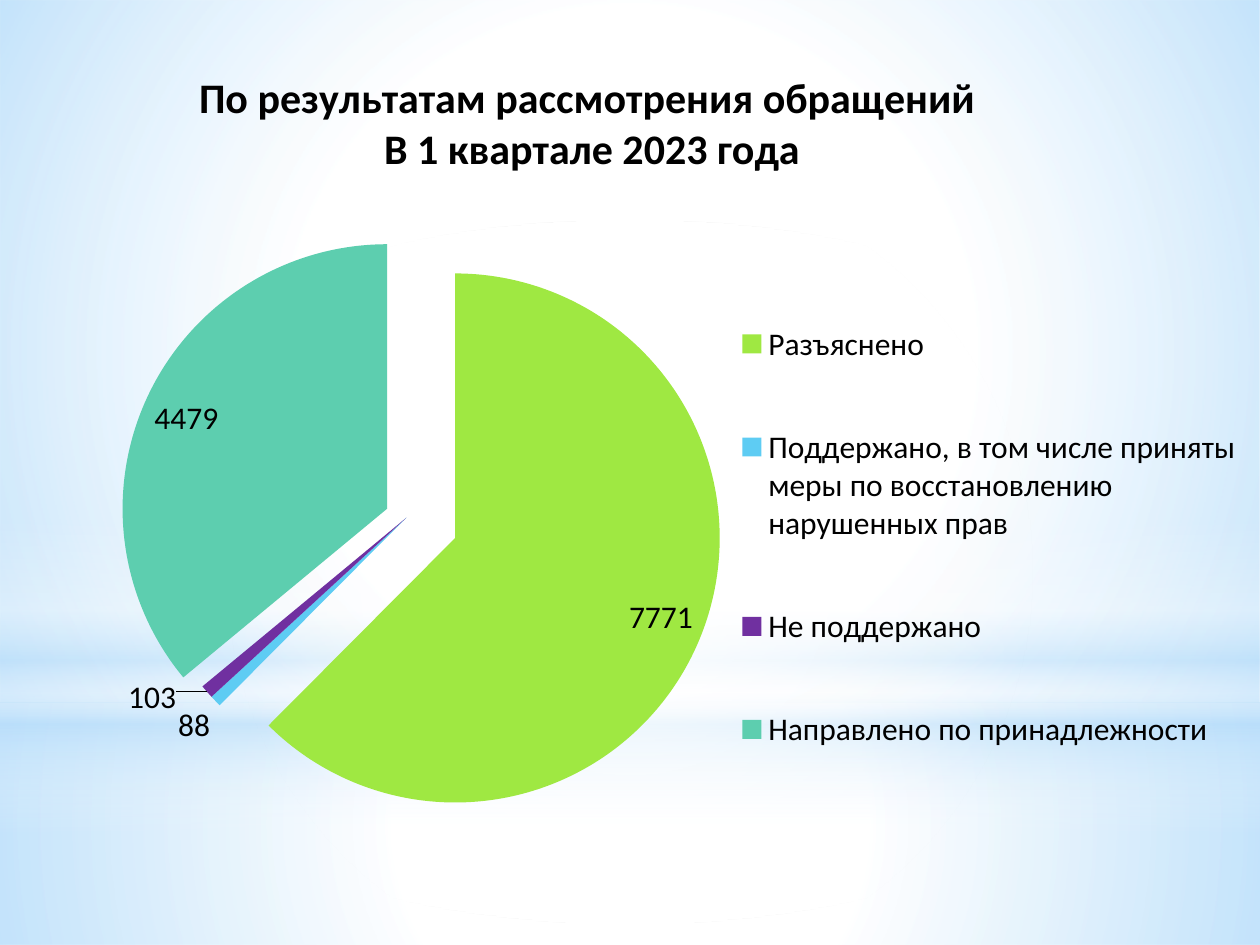
from dataclasses import dataclass
from typing import Optional

import lxml.etree
import pptx
import pptx.chart.data
import pptx.dml.color
import pptx.enum.chart
import pptx.enum.shapes
import pptx.oxml
import pptx.oxml.ns
import pptx.util

Cm = pptx.util.Cm
Pt = pptx.util.Pt
RGBColor = pptx.dml.color.RGBColor
qn = pptx.oxml.ns.qn
LabelPosition = pptx.enum.chart.XL_LABEL_POSITION
ShapeType = pptx.enum.shapes.MSO_SHAPE

WHITE = RGBColor(0xFF, 0xFF, 0xFF)
BLACK = RGBColor(0x00, 0x00, 0x00)
SKY = RGBColor(0xB4, 0xDC, 0xFA)
LIME = RGBColor(0x9F, 0xE8, 0x42)
BLUE = RGBColor(0x5E, 0xCC, 0xF3)
PURPLE = RGBColor(0x70, 0x30, 0xA0)
TEAL = RGBColor(0x5D, 0xCE, 0xAF)

FONT = "Calibri"
WIDTH, HEIGHT = 25.4, 19.05
HORIZON = 14.17


@dataclass
class Glow:
    shape: ShapeType
    top: float
    height: float
    stops: list  # (position %, colour, opacity %)
    angle: Optional[int] = None  # None gives a radial gradient


@dataclass
class Outcome:
    name: str
    count: int
    color: RGBColor
    explosion: int
    label: LabelPosition
    label_shift: Optional[tuple] = None  # fractions of the chart


GLOWS = [
    Glow(ShapeType.RECTANGLE, HORIZON, HEIGHT - HORIZON,
         [(0, WHITE, 91), (37, WHITE, 76), (100, SKY, 79)]),
    Glow(ShapeType.RECTANGLE, 0, HORIZON,
         [(0, WHITE, 89), (48, WHITE, 62), (100, SKY, 79)]),
    Glow(ShapeType.RECTANGLE, 10.46, 6.35,
         [(0, WHITE, 0), (29, WHITE, 30), (45, SKY, 40),
          (55, WHITE, 26), (65, SKY, 60), (100, WHITE, 0)], 90),
    Glow(ShapeType.OVAL, 4.45, HORIZON, [(0, WHITE, 100), (56, WHITE, 0)]),
]

OUTCOMES = [
    Outcome("Разъяснено", 7771, LIME, 20, LabelPosition.INSIDE_END),
    Outcome("Поддержано, в том числе приняты меры по восстановлению нарушенных прав",
            88, BLUE, 0, LabelPosition.OUTSIDE_END),
    Outcome("Не поддержано", 103, PURPLE, 0, LabelPosition.OUTSIDE_END, (-0.02, -0.02)),
    Outcome("Направлено по принадлежности", 4479, TEAL, 8, LabelPosition.INSIDE_END),
]
MAX_EXPLOSION = 25
HEADING = ["По результатам рассмотрения обращений ", "В 1 квартале 2023 года"]


def add_child(parent, tag: str, **attributes):
    child = lxml.etree.SubElement(parent, qn(tag))
    for name, value in attributes.items():
        child.set(name, str(value))
    return child


def draw_glow(slide, glow: Glow) -> None:
    area = slide.shapes.add_shape(glow.shape, 0, Cm(glow.top), Cm(WIDTH), Cm(glow.height))
    area.shadow.inherit = False
    area.line.fill.background()
    area.fill.gradient()
    gradient = area.fill._xPr.find(qn("a:gradFill"))
    for child in list(gradient):
        gradient.remove(child)
    stop_list = add_child(gradient, "a:gsLst")
    for position, color, opacity in glow.stops:
        stop = add_child(stop_list, "a:gs", pos=position * 1000)
        tint = add_child(stop, "a:srgbClr", val=color)
        add_child(tint, "a:alpha", val=opacity * 1000)
    if glow.angle is None:
        radial = add_child(gradient, "a:path", path="circle")
        add_child(radial, "a:fillToRect", l=50000, t=50000, r=50000, b=50000)
    else:
        add_child(gradient, "a:lin", ang=glow.angle * 60000, scaled=0)


def place(part, after: Optional[str], **settings) -> None:
    """Give a chart part a manual layout, in fractions of the chart."""
    for old in part.findall(qn("c:layout")):
        part.remove(old)
    layout = pptx.oxml.parse_xml(
        '<c:layout xmlns:c="http://schemas.openxmlformats.org/drawingml/2006/chart"/>')
    manual = add_child(layout, "c:manualLayout")
    for name, value in settings.items():
        add_child(manual, f"c:{name}", val=value)
    part.insert(0 if after is None else part.index(part.find(qn(after))) + 1, layout)


def explode(part, before: str, percent: int) -> None:
    """Set how far a series or a slice stands off from the centre."""
    part.find(qn(before)).addprevious(add_child(part, "c:explosion", val=percent))


def format_font(font, size: int, bold: bool = False) -> None:
    font.name = FONT
    font.size = Pt(size)
    font.bold = bold
    font.color.rgb = BLACK


def add_outcome_chart(slide) -> None:
    results = pptx.chart.data.CategoryChartData()
    results.categories = [outcome.name for outcome in OUTCOMES]
    results.add_series("Series 1", [outcome.count for outcome in OUTCOMES])
    chart = slide.shapes.add_chart(
        pptx.enum.chart.XL_CHART_TYPE.PIE, 0, Cm(0.13), Cm(WIDTH), Cm(HEIGHT - 0.13),
        results).chart
    chart.font.name = "Karla"
    chart.font.size = Pt(18)

    # Heading
    chart.has_title = True
    chart.chart_title.include_in_layout = True
    heading = chart.chart_title.text_frame
    heading.text = "\n".join(HEADING)
    for paragraph in heading.paragraphs:
        for run in paragraph.runs:
            format_font(run.font, 24, bold=True)
    place(chart.chart_title._element, "c:tx", xMode="edge", yMode="edge", x=0.155, y=0.065)

    # Legend
    chart.has_legend = True
    chart.legend.position = pptx.enum.chart.XL_LEGEND_POSITION.RIGHT
    chart.legend.include_in_layout = False
    format_font(chart.legend.font, 18)
    place(chart.legend._element, "c:legendPos", xMode="edge", yMode="edge",
          x=0.58, y=0.27, w=0.41, h=0.59)

    # Slices and their labels
    pie = chart.plots[0]
    pie.vary_by_categories = True
    place(chart._chartSpace.chart.plotArea, None, layoutTarget="inner",
          xMode="edge", yMode="edge", x=0.06, y=0.19, w=0.525, h=0.71)
    slices = pie.series[0]
    slices.data_labels.show_value = True
    format_font(slices.data_labels.font, 18)
    for index, outcome in enumerate(OUTCOMES):
        point = slices.points[index]
        point.format.fill.solid()
        point.format.fill.fore_color.rgb = outcome.color
        point.format.line.fill.background()
        explode(slices._element.findall(qn("c:dPt"))[index], "c:spPr", outcome.explosion)
        format_font(point.data_label.font, 18)
        point.data_label.position = outcome.label
        if outcome.label_shift:
            label = slices._element.xpath(f"c:dLbls/c:dLbl[c:idx/@val='{index}']")[0]
            across, down = outcome.label_shift
            place(label, "c:idx", x=across, y=down)
    explode(slices._element, "c:dPt", MAX_EXPLOSION)


def main() -> None:
    presentation = pptx.Presentation()
    presentation.slide_width = Cm(WIDTH)
    presentation.slide_height = Cm(HEIGHT)
    slide = presentation.slides.add_slide(presentation.slide_layouts[6])
    slide.background.fill.solid()
    slide.background.fill.fore_color.rgb = WHITE
    for glow in GLOWS:
        draw_glow(slide, glow)
    add_outcome_chart(slide)
    presentation.save("out.pptx")


if __name__ == "__main__":
    main()
